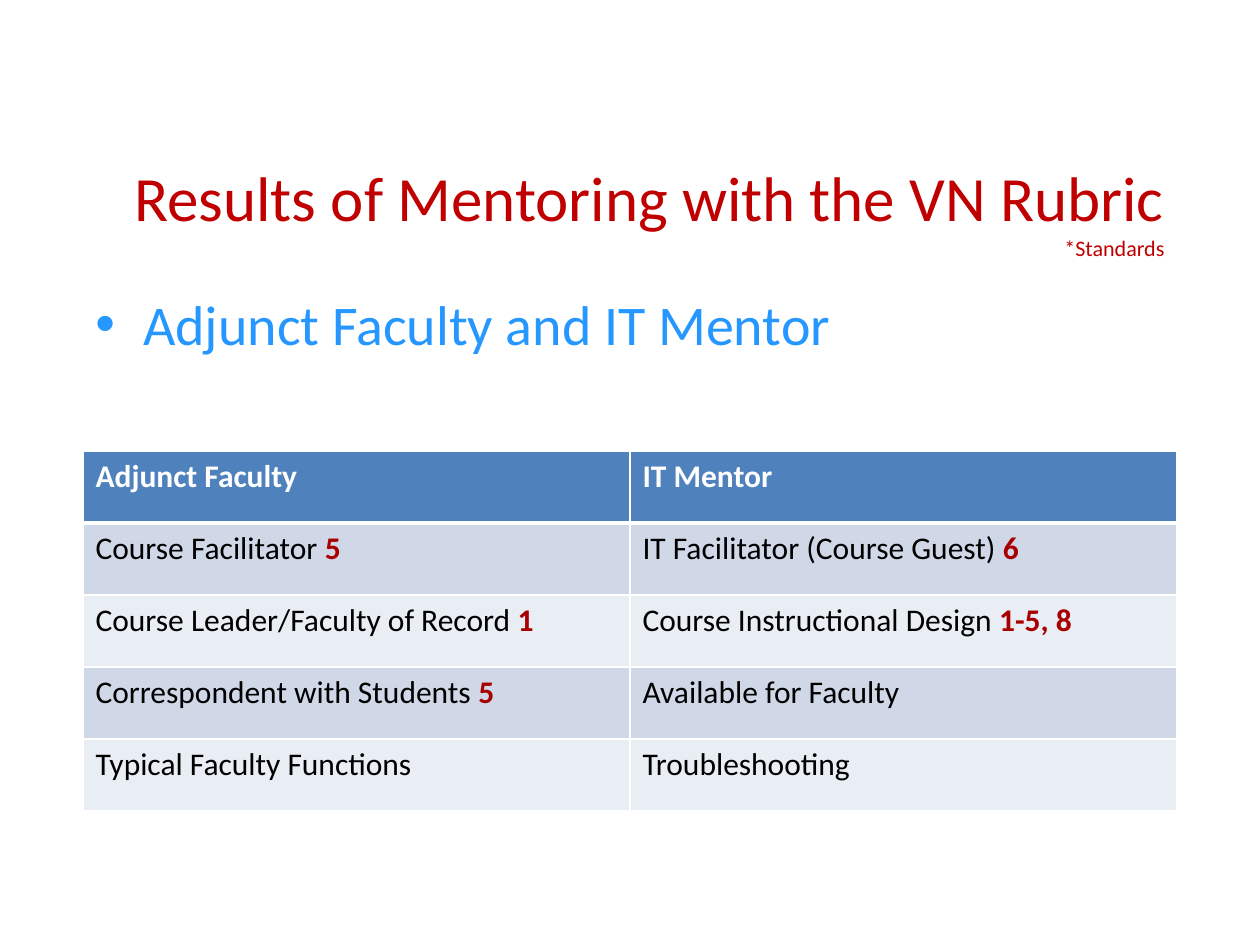
from lxml.etree import SubElement
from pptx import Presentation
from pptx.dml.color import RGBColor
from pptx.enum.text import MSO_ANCHOR, MSO_AUTO_SIZE, PP_ALIGN
from pptx.oxml.ns import qn
from pptx.util import Emu, Inches, Pt

FONT = "Calibri"
LEFT, WIDTH = 83, 1094
ROW_HEIGHT = 72
TITLE_RED, BULLET_BLUE, STANDARD_RED = "C00000", "2597FF", "A80000"
WHITE, BLACK = "FFFFFF", "000000"
HEADER_FILL, BAND_FILLS = "4F81BD", ("D0D8E8", "E9EDF4")

HEADINGS = ("Adjunct Faculty", "IT Mentor")
# Each entry is a role and the rubric standards it meets.
ROLES = [
    (("Course Facilitator ", "5"), ("IT Facilitator (Course Guest) ", "6")),
    (("Course Leader/Faculty of Record ", "1"),
     ("Course Instructional Design ", "1-5, 8")),
    (("Correspondent with Students ", "5"), ("Available for Faculty", "")),
    (("Typical Faculty Functions", ""), ("Troubleshooting", "")),
]


def px(*lengths):
    """Turn pixels at 126 to the inch into EMU."""
    return [Emu(round(length * Inches(1) / 126)) for length in lengths]


def color(hex_string):
    return RGBColor.from_string(hex_string)


def format_run(run, size, hex_string, bold=False):
    run.font.name = FONT
    run.font.size = Pt(size)
    run.font.bold = bold
    run.font.color.rgb = color(hex_string)


def set_title(slide):
    title = slide.shapes.title
    title.left, title.top, title.width, title.height = px(LEFT, 157, WIDTH, 106)
    frame = title.text_frame
    frame.text = "Results of Mentoring with the VN Rubric\v*Standards"
    frame.auto_size = MSO_AUTO_SIZE.NONE
    frame.vertical_anchor = MSO_ANCHOR.MIDDLE
    paragraph = frame.paragraphs[0]
    paragraph.alignment = PP_ALIGN.RIGHT
    for run, size in zip(paragraph.runs, (36, 12.6)):
        format_run(run, size, TITLE_RED)
    line_break = paragraph._p.find(qn("a:br"))
    SubElement(line_break, qn("a:rPr"), sz="3600")


def add_bullet(slide, text):
    box = slide.shapes.add_textbox(*px(LEFT, 283, WIDTH, 590))
    frame = box.text_frame
    frame.word_wrap = True
    frame.text = text
    paragraph = frame.paragraphs[0]
    properties = paragraph._p.get_or_add_pPr()
    indent = Inches(0.38)
    properties.set("marL", str(indent))
    properties.set("indent", str(-indent))
    SubElement(properties, qn("a:buFont"), typeface="Arial")
    SubElement(properties, qn("a:buChar"), char="•")
    format_run(paragraph.runs[0], 32, BULLET_BLUE)


def set_borders(cell, top=1, bottom=1):
    properties = cell._tc.get_or_add_tcPr()
    for side, width in (("L", 1), ("R", 1), ("T", top), ("B", bottom)):
        line = SubElement(properties, qn(f"a:ln{side}"), w=str(Pt(width)))
        fill = SubElement(line, qn("a:solidFill"))
        SubElement(fill, qn("a:srgbClr"), val=WHITE)


def fill_cell(cell, hex_string, runs):
    """Fill the cell and write its (text, colour, bold) runs."""
    cell.fill.solid()
    cell.fill.fore_color.rgb = color(hex_string)
    paragraph = cell.text_frame.paragraphs[0]
    for text, text_color, bold in runs:
        run = paragraph.add_run()
        run.text = text
        format_run(run, 18, text_color, bold)


def add_roles_table(slide):
    row_count = len(ROLES) + 1
    table = slide.shapes.add_table(
        row_count, len(HEADINGS),
        *px(LEFT, 451, WIDTH, ROW_HEIGHT * row_count)).table
    for cell, heading in zip(table.rows[0].cells, HEADINGS):
        set_borders(cell, bottom=3)
        fill_cell(cell, HEADER_FILL, [(heading, WHITE, True)])
    for index, roles in enumerate(ROLES):
        for cell, (role, standards) in zip(table.rows[index + 1].cells, roles):
            runs = [(role, BLACK, False)]
            if standards:
                runs.append((standards, STANDARD_RED, True))
            set_borders(cell, top=3 if index == 0 else 1)
            fill_cell(cell, BAND_FILLS[index % 2], runs)


def main():
    presentation = Presentation()
    presentation.slide_width, presentation.slide_height = px(1260, 945)
    slide = presentation.slides.add_slide(presentation.slide_layouts[5])
    set_title(slide)
    add_bullet(slide, "Adjunct Faculty and IT Mentor")
    add_roles_table(slide)
    presentation.save("out.pptx")


if __name__ == "__main__":
    main()
